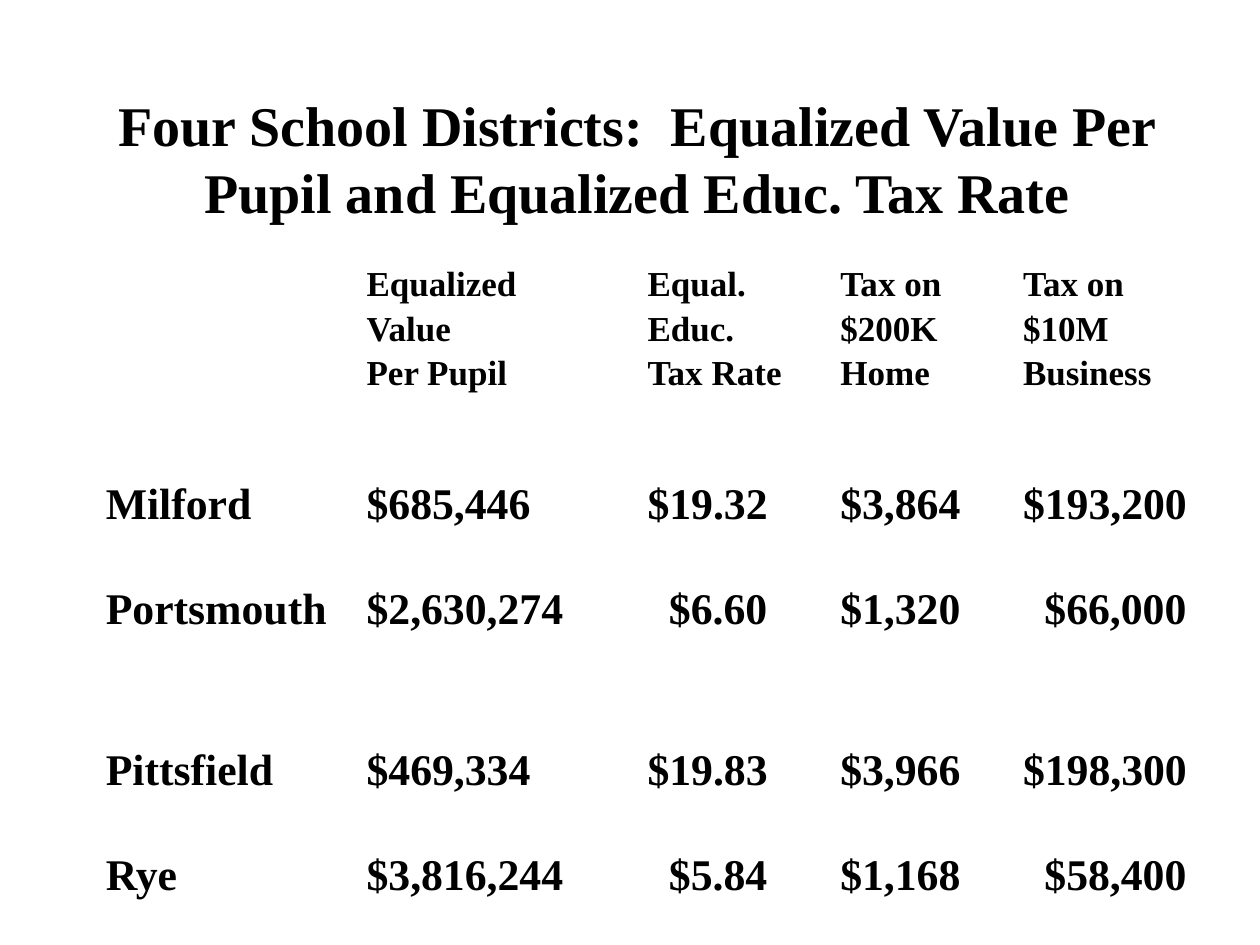
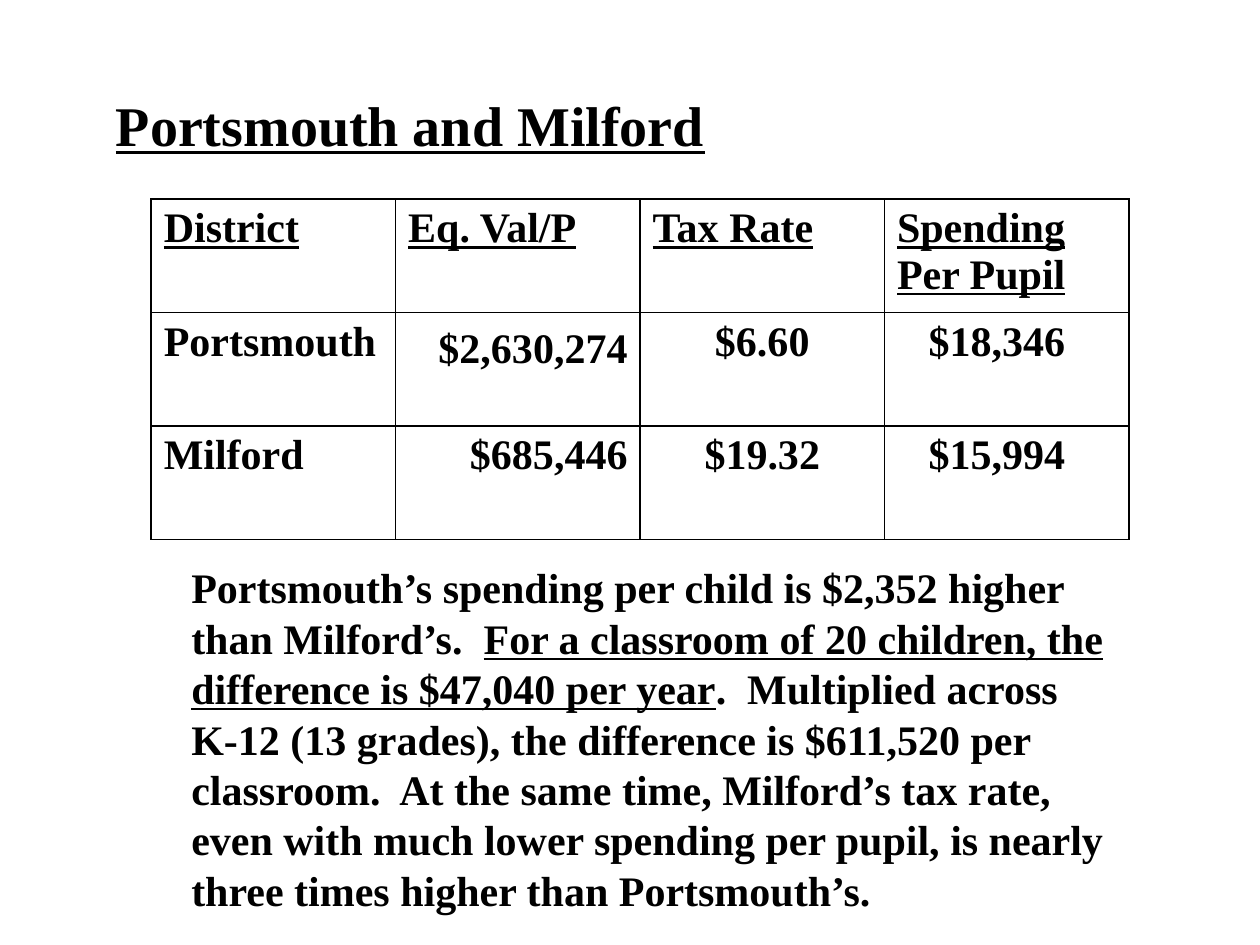
from lxml.etree import SubElement
from pptx import Presentation
from pptx.dml.color import RGBColor as RGB
from pptx.enum.text import MSO_ANCHOR as Anchor, MSO_AUTO_SIZE as Fit, PP_ALIGN as Align
from pptx.oxml.ns import qn
from pptx.util import Inches, Pt

COLORS = {"ink": "000000", "page": "FFFFFF"}
FACE = "Times New Roman"
WIDE = 1.15  # line spacing of figures


def style(par, size, line=None, align=None, indent=0, under=None):
    """Give a paragraph the shared bold face and its layout."""
    font = par.font
    font.name, font.size, font.bold = FACE, Pt(size), True
    font.color.rgb = RGB.from_string(COLORS["ink"])
    font.underline = under
    par.alignment = align
    if line:
        par.line_spacing = line
    if indent:
        props = par._p.get_or_add_pPr()
        props.set("marL", str(Inches(indent)))
        props.set("indent", "0")


def add_page(deck, text, align, under=None):
    """Add a slide with its title."""
    page = deck.slides.add_slide(deck.slide_layouts[5])
    page.background.fill.solid()
    page.background.fill.fore_color.rgb = RGB.from_string(COLORS["page"])
    title = page.shapes.title
    title.left, title.top, title.width, title.height = map(Inches, (0.75, 0.67, 8.5, 6))
    frame = title.text_frame
    frame.text = text
    frame.word_wrap, frame.auto_size = True, Fit.NONE
    frame.vertical_anchor = Anchor.TOP
    frame.margin_left = frame.margin_right = Inches(0.05)
    frame.margin_top = frame.margin_bottom = Inches(0.05)
    par = frame.paragraphs[0]
    style(par, 32, align=align, indent=0.12, under=under)
    par.space_before = Pt(7)
    return page


def add_grid(page, left, top, cols, rows):
    """Add a plain table with the given column widths and row heights."""
    box = map(Inches, (left, top, sum(cols), sum(rows)))
    grid = page.shapes.add_table(len(rows), len(cols), *box).table
    grid.first_row = grid.horz_banding = False
    for col, width in zip(grid.columns, cols):
        col.width = Inches(width)
    for row, height in zip(grid.rows, rows):
        row.height = Inches(height)
    for cell in grid.iter_cells():
        cell.fill.background()
    return grid


def fill_cell(cell, text, *look, **more):
    """Write text in a cell, one paragraph a line."""
    cell.text_frame.text = text
    for par in cell.text_frame.paragraphs:
        style(par, *look, **more)


def frame_cell(cell):
    """Draw a thin line on each side of a cell."""
    props = cell._tc.get_or_add_tcPr()
    for spot, side in enumerate(("lnL", "lnR", "lnT", "lnB")):
        line = SubElement(props, qn(f"a:{side}"), w=str(Pt(1)))
        paint = SubElement(line, qn("a:solidFill"))
        SubElement(paint, qn("a:srgbClr"), val=COLORS["ink"])
        props.insert(spot, line)


def add_rates(page, left, top):
    """Tax rates of the four districts."""
    data = [
        ("", "Equalized\nValue\nPer Pupil", "Equal.\nEduc.\nTax Rate",
         "Tax on $200K\nHome", "Tax on $10M\nBusiness"),
        ("Milford", "$685,446", "$19.32", "$3,864", "$193,200"),
        ("Portsmouth", "$2,630,274", "$6.60", "$1,320", "$66,000"),
        ("",) * 5,
        ("Pittsfield", "$469,334", "$19.83", "$3,966", "$198,300"),
        ("Rye", "$3,816,244", "$5.84", "$1,168", "$58,400"),
    ]
    grid = add_grid(page, left, top, [2.07, 2.23, 1.53, 1.45, 1.55],
                    [1.7, 0.83, 0.83, 0.45, 0.83, 0.45])
    for r, row in enumerate(data):
        for c, text in enumerate(row):
            cell = grid.cell(r, c)
            cell.margin_left = cell.margin_right = Inches(0.07)
            cell.margin_top = cell.margin_bottom = 0
            # Shorter figures line up with the longer ones above
            short = row[0] in ("Portsmouth", "Rye") and c in (2, 4)
            fill_cell(cell, text, 25 if r else 20, WIDE, indent=0.17 if short else 0)


def add_pair(page, left, top):
    """Value, rate and spending of two districts."""
    data = [
        ("District", "Eq. Val/P", "Tax Rate", "Spending\nPer Pupil"),
        ("Portsmouth", "$2,630,274", "$6.60", "$18,346"),
        ("Milford", "$685,446", "$19.32", "$15,994"),
    ]
    sides = [None, Align.RIGHT, Align.CENTER, None]
    grid = add_grid(page, left, top, [1.94] * 4, [0.9] * 3)
    for r, row in enumerate(data):
        for c, text in enumerate(row):
            cell = grid.cell(r, c)
            if r == 0:
                fill_cell(cell, text, 24, under=True)
            else:
                fill_cell(cell, text, 24, WIDE if (r, c) == (1, 1) else None,
                          sides[c], 0.25 if c == 3 else 0)
            frame_cell(cell)


def add_note(page, left, top, width, height):
    """Comment under the table, with one underlined part."""
    box = page.shapes.add_textbox(*map(Inches, (left, top, width, height)))
    frame = box.text_frame
    frame.word_wrap, frame.auto_size = True, Fit.SHAPE_TO_FIT_TEXT
    par = frame.paragraphs[0]
    style(par, 24)
    parts = [
        ("Portsmouth’s spending per child is $2,352 higher than Milford’s.  ", False),
        ("For a classroom of 20 children, the difference is $47,040 per year", True),
        (".  Multiplied across K-12 (13 grades), the difference is $611,520 per "
         "classroom.  At the same time, Milford’s tax rate, even with much lower "
         "spending per pupil, is nearly three times higher than Portsmouth’s.", False),
    ]
    for text, under in parts:
        run = par.add_run()
        run.text, run.font.underline = text, under


def main():
    deck = Presentation()
    deck.slide_width, deck.slide_height = Inches(10), Inches(7.5)

    # Four districts
    page = add_page(deck, "Four School Districts:  Equalized Value Per Pupil "
                    "and Equalized Educ. Tax Rate", Align.CENTER)
    add_rates(page, 0.77, 2.06)

    # Two districts compared
    page = add_page(deck, "Portsmouth and Milford", Align.LEFT, True)
    add_pair(page, 1.2, 1.58)
    add_note(page, 1.42, 4.41, 7.64, 2.93)

    deck.save("out.pptx")


if __name__ == "__main__":
    main()
